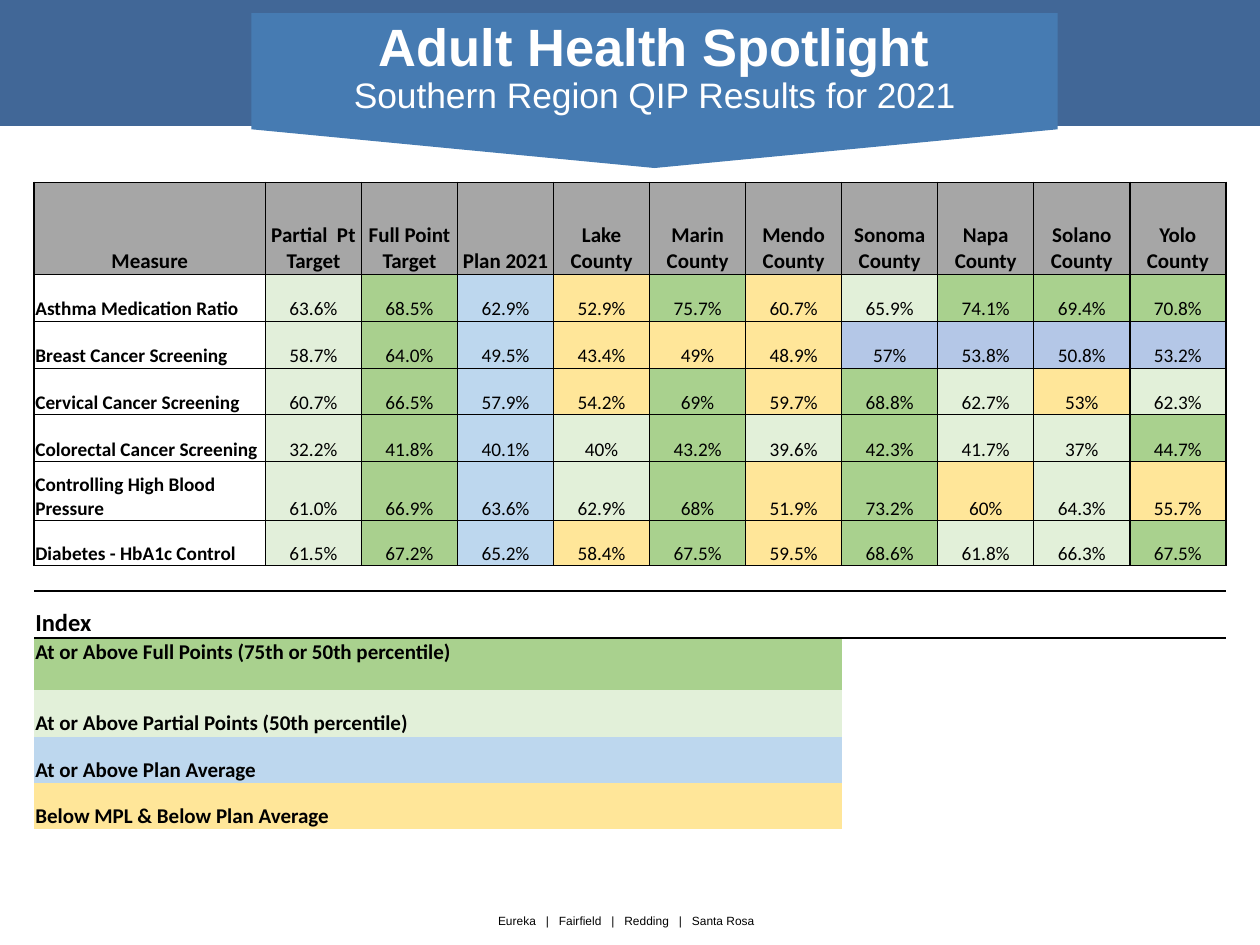
import lxml.etree
import pptx
import pptx.dml.color
import pptx.enum.shapes
import pptx.enum.text
import pptx.oxml.ns
import pptx.util

Pt = pptx.util.Pt
ALIGN = pptx.enum.text.PP_ALIGN
ANCHOR = pptx.enum.text.MSO_ANCHOR
SHAPE = pptx.enum.shapes.MSO_SHAPE
qn = pptx.oxml.ns.qn

COLORS = {
    "band": "416797", "ribbon": "467BB2", "white": "FFFFFF", "black": "000000",
    "header": "A6A6A6", "partial target": "E2EFDA", "full target": "A9D08E",
    "F": "A9D18E", "P": "E2F0D9", "A": "BDD7EE", "B": "FFE699", "R": "B4C7E7",
}
HEADERS = ["Measure", "Partial  Pt Target", "Full Point Target", "Plan 2021"] + [
    f"{county} County"
    for county in ("Lake", "Marin", "Mendo", "Sonoma", "Napa", "Solano", "Yolo")
]
RESULTS = [
    ("Asthma Medication Ratio", "63.6 68.5 62.9 52.9 75.7 60.7 65.9 74.1 69.4 70.8", "BFBPFFF"),
    ("Breast Cancer Screening", "58.7 64.0 49.5 43.4 49 48.9 57 53.8 50.8 53.2", "BBBRRRR"),
    ("Cervical Cancer Screening", "60.7 66.5 57.9 54.2 69 59.7 68.8 62.7 53 62.3", "BFBFPBP"),
    ("Colorectal Cancer Screening", "32.2 41.8 40.1 40 43.2 39.6 42.3 41.7 37 44.7", "PFPFPPF"),
    ("Controlling High Blood Pressure", "61.0 66.9 63.6 62.9 68 51.9 73.2 60 64.3 55.7", "PFBFBPB"),
    ("Diabetes - HbA1c Control", "61.5 67.2 65.2 58.4 67.5 59.5 68.6 61.8 66.3 67.5", "BFBFPPF"),
]
LEGEND = [
    ("At or Above Full Points (75th or 50th percentile)", "F"),
    ("At or Above Partial Points (50th percentile)", "P"),
    ("At or Above Plan Average", "A"),
    ("Below MPL & Below Plan Average", "B"),
]
ROW_HEIGHTS = [52.5] + [26.8] * 4 + [33.7, 25.7, 14.6, 26.8, 29.5, 26.8, 26.8, 26.3]
MEASURE_WIDTH, LEGEND_SPAN, THICK_FROM = 132.2, 7, 7
PLAIN_STYLE = "{2D5ABB26-0587-4C30-8999-92F81FD0307C}"


def rgb(name):
    """Return the named colour."""
    return pptx.dml.color.RGBColor.from_string(COLORS[name])


def add_span(para, text, size, font="Calibri", color="black", bold=False):
    """Add one formatted run to a paragraph."""
    span = para.add_run()
    span.text = text
    span.font.size, span.font.name, span.font.bold = Pt(size), font, bold
    span.font.color.rgb = rgb(color)


def set_margins(frame, left, top, right, bottom):
    """Set the four insets of a text frame or cell."""
    frame.margin_left, frame.margin_top = Pt(left), Pt(top)
    frame.margin_right, frame.margin_bottom = Pt(right), Pt(bottom)


def add_block(page, kind, box, color):
    """Add a flat filled preset shape."""
    shape = page.shapes.add_shape(kind, *(Pt(length) for length in box))
    shape.shadow.inherit = False
    shape.fill.solid()
    shape.fill.fore_color.rgb = rgb(color)
    shape.line.fill.background()
    return shape


def add_banner(page, box):
    """Place the top band, the downward ribbon and the title in the box."""
    left, top, width, height = box
    add_block(page, SHAPE.RECTANGLE, box, "band")
    ribbon_width, ribbon_height = 460.8, 88.5
    center_x, center_y = left + 374, top + 51.8
    ribbon = add_block(page, SHAPE.PENTAGON, (
        center_x - ribbon_height / 2, center_y - ribbon_width / 2,
        ribbon_height, ribbon_width), "ribbon")
    ribbon.rotation = 90
    ribbon.adjustments[0] = 0.25

    title = page.shapes.title
    title.element.getparent().append(title.element)
    title.left, title.top = Pt(center_x - ribbon_width / 2), Pt(top + 8)
    title.width, title.height = Pt(ribbon_width), Pt(62.6)
    frame = title.text_frame
    frame.word_wrap = True
    frame.auto_size = pptx.enum.text.MSO_AUTO_SIZE.NONE
    frame.vertical_anchor = ANCHOR.MIDDLE
    para = frame.paragraphs[0]
    para.alignment, para.line_spacing = ALIGN.CENTER, 0.9
    add_span(para, "Adult Health Spotlight", 30, "Arial", "white", True)
    para.add_line_break()
    add_span(para, "Southern Region QIP Results for 2021", 20.2, "Arial", "white")


def set_border(cell, side, width):
    """Draw one side of a cell in black."""
    line = lxml.etree.SubElement(cell._tc.get_or_add_tcPr(), qn(f"a:ln{side}"), w=str(Pt(width)))
    fill = lxml.etree.SubElement(line, qn("a:solidFill"))
    lxml.etree.SubElement(fill, qn("a:srgbClr"), val=COLORS["black"])


def write_cell(cell, text, size, bold=False, align=ALIGN.LEFT, fill=None):
    """Fill a table cell and write its text."""
    para = cell.text_frame.paragraphs[0]
    para.alignment = align
    add_span(para, text, size, bold=bold)
    if fill:
        cell.fill.solid()
        cell.fill.fore_color.rgb = rgb(fill)


def prepare_cells(table):
    """Set insets, anchors, borders and the size of empty lines."""
    last_result = len(RESULTS)
    for row in range(len(ROW_HEIGHTS)):
        for column in range(len(HEADERS)):
            cell = table.cell(row, column)
            set_margins(cell, 0.7, 0.7, 0.7, 0)
            cell.vertical_anchor = ANCHOR.BOTTOM
            para = cell.text_frame.paragraphs[0]
            lxml.etree.SubElement(para._p, qn("a:endParaRPr"), sz="800")
            if row <= last_result:
                set_border(cell, "L", 1 if column == 0 or column > THICK_FROM else 0.5)
                set_border(cell, "R", 1 if column >= THICK_FROM else 0.5)
                set_border(cell, "T", 0.5 if row else 1)
                set_border(cell, "B", 0.5)
            elif row == last_result + 1:
                set_border(cell, "T", 0.5)
                set_border(cell, "B", 1)
            elif row == last_result + 2:
                set_border(cell, "T", 1)


def add_results(page, box):
    """Place the results table with its colour index in the box."""
    graphic = page.shapes.add_table(
        len(ROW_HEIGHTS), len(HEADERS), *(Pt(length) for length in box))
    table = graphic.table
    table.first_row = table.horz_banding = False
    table._tbl.tblPr.find(qn("a:tableStyleId")).text = PLAIN_STYLE
    for row, height in zip(table.rows, ROW_HEIGHTS):
        row.height = Pt(height)
    value_width = (box[2] - MEASURE_WIDTH) / (len(HEADERS) - 1)
    for number, column in enumerate(table.columns):
        column.width = Pt(value_width if number else MEASURE_WIDTH)
    prepare_cells(table)

    for column, header in enumerate(HEADERS):
        write_cell(table.cell(0, column), header, 12, True, ALIGN.CENTER, "header")
    for row, (measure, values, ratings) in enumerate(RESULTS, 1):
        write_cell(table.cell(row, 0), measure, 11, True)
        fills = ["partial target", "full target", "A", *ratings]
        for column, (value, fill) in enumerate(zip(values.split(), fills), 1):
            write_cell(table.cell(row, column), f"{value}%", 11, False, ALIGN.CENTER, fill)

    index_row = len(RESULTS) + 2
    for row, (text, fill) in enumerate([("Index", None)] + LEGEND, index_row):
        cell = table.cell(row, 0)
        cell.merge(table.cell(row, LEGEND_SPAN - 1))
        write_cell(cell, text, 12 if fill else 14, True, fill=fill)
    table.cell(index_row + 1, 0).vertical_anchor = ANCHOR.TOP


def add_footer(page, box):
    """Place the line of office locations in the box."""
    frame = page.shapes.add_textbox(*(Pt(length) for length in box)).text_frame
    frame.word_wrap = True
    para = frame.paragraphs[0]
    para.alignment = ALIGN.CENTER
    add_span(para, "Eureka   |   Fairfield   |   Redding   |   Santa Rosa", 6.8, "Arial")


def main():
    """Build and save the deck."""
    deck = pptx.Presentation()
    deck.slide_width, deck.slide_height = Pt(720), Pt(540)
    page = deck.slides.add_slide(deck.slide_layouts[5])
    add_footer(page, (-2, 518.4, 720, 15))
    add_banner(page, (0, 0, 720, 72))
    add_results(page, (19.5, 104.2, 681, sum(ROW_HEIGHTS)))
    deck.save("out.pptx")


if __name__ == "__main__":
    main()
